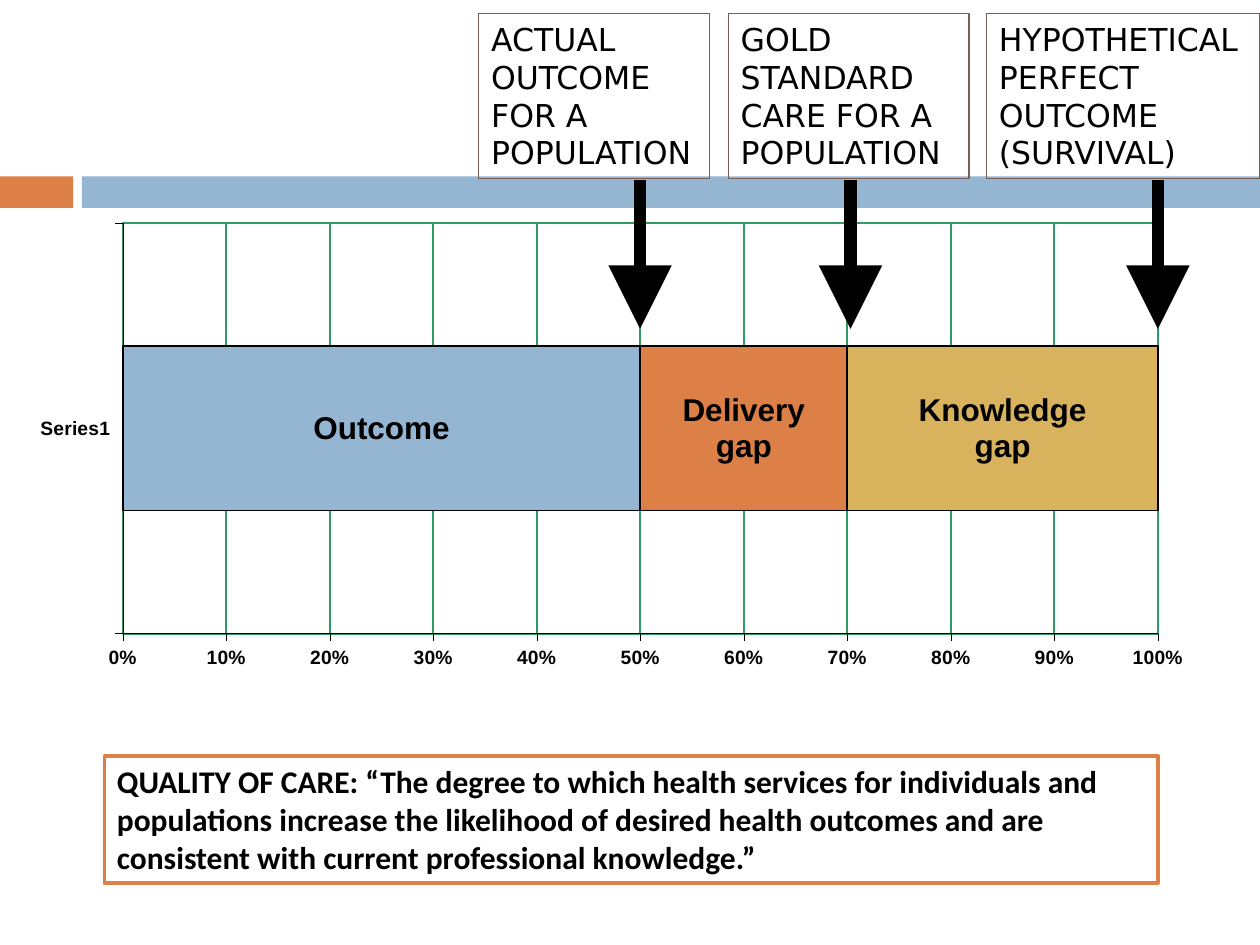
from dataclasses import dataclass

from lxml import etree
from pptx import Presentation
from pptx import util as u
from pptx.chart import data
from pptx.dml import color
from pptx.enum import chart as charts, shapes, text
from pptx.oxml import ns, parse_xml


@dataclass(frozen=True)
class Theme:
    black: str = "000000"
    blue: str = "94B6D2"
    orange: str = "DD8047"
    gold: str = "D8B25C"
    brown: str = "775F55"
    green: str = "339966"
    axis_size: float = 11
    text_size: float = 18
    hairline: float = 0.25
    outline: float = 0.75
    chart_line: float = 0.96
    frame_line: float = 2.25
    arrow_line: float = 7.25


@dataclass(frozen=True)
class Box:
    left: float
    top: float
    width: float
    height: float

    @property
    def bottom(self):
        return self.top + self.height

    def emu(self):
        return [cells(n) for n in (self.left, self.top, self.width, self.height)]


THEME = Theme()
COLUMNS, ROWS = 100, 75
CELL = u.Inches(0.1)


def cells(count):
    return u.Emu(round(count * CELL))


def rgb(value):
    return color.RGBColor.from_string(value)


def style_line(line, value, width):
    line.color.rgb = rgb(value)
    line.width = u.Pt(width)


def style_font(font, name, size, bold=False):
    font.name, font.size, font.bold = name, u.Pt(size), bold
    font.color.rgb = rgb(THEME.black)


def add_band(page, box):
    accent, gap = 5.8, 0.7
    start = box.left + accent + gap
    parts = (
        (Box(box.left, box.top, accent, box.height), THEME.orange),
        (Box(start, box.top, box.width - accent - gap, box.height), THEME.blue),
    )
    for part, fill in parts:
        bar = page.shapes.add_shape(shapes.MSO_SHAPE.RECTANGLE, *part.emu())
        bar.fill.solid()
        bar.fill.fore_color.rgb = rgb(fill)
        bar.line.fill.background()
        bar.shadow.inherit = False


def add_framed_text(page, box, words, font_name, bold, line_color, line_width):
    frame = page.shapes.add_textbox(*box.emu())
    style_line(frame.line, line_color, line_width)
    frame.text_frame.word_wrap = True
    frame.text_frame.auto_size = text.MSO_AUTO_SIZE.SHAPE_TO_FIT_TEXT
    para = frame.text_frame.paragraphs[0]
    para.text = words
    style_font(para.font, font_name, THEME.text_size, bold)


def add_arrow(page, column, start, tip):
    arrow = page.shapes.add_connector(
        shapes.MSO_CONNECTOR.STRAIGHT,
        cells(column), cells(start), cells(column), cells(tip),
    )
    style_line(arrow.line, THEME.black, THEME.arrow_line)
    properties = arrow.element.spPr
    etree.SubElement(
        arrow.line._get_or_add_ln(), ns.qn("a:tailEnd"),
        type="triangle", w="lg", len="lg",
    )
    etree.SubElement(properties, ns.qn("a:effectLst"))


def add_callouts(page, box, arrow_tip):
    callouts = (
        ("ACTUAL OUTCOME FOR A POPULATION", 0, 18.3, 50.8),
        ("GOLD STANDARD CARE FOR A POPULATION", 19.8, 19.1, 67.5),
        ("HYPOTHETICAL PERFECT OUTCOME (SURVIVAL)", 40.3, 21.7, 91.9),
    )
    for words, offset, width, column in callouts:
        place = Box(box.left + offset, box.top, width, box.height)
        add_framed_text(page, place, words, "DejaVu Sans", False,
                        THEME.brown, THEME.outline)
        add_arrow(page, column, box.bottom + 0.1, arrow_tip)


def place_plot(chart, box, inner):
    shares = {
        "x": (inner.left - box.left) / box.width,
        "y": (inner.top - box.top) / box.height,
        "w": inner.width / box.width,
        "h": inner.height / box.height,
    }
    sizes = "".join(f'<c:{key} val="{share:.4f}"/>' for key, share in shares.items())
    layout = parse_xml(
        f'<c:layout {ns.nsdecls("c")}><c:manualLayout>'
        '<c:layoutTarget val="inner"/><c:xMode val="edge"/><c:yMode val="edge"/>'
        f'{sizes}</c:manualLayout></c:layout>'
    )
    border = parse_xml(
        f'<c:spPr {ns.nsdecls("c", "a")}><a:noFill/>'
        f'<a:ln w="{u.Pt(THEME.chart_line)}"><a:solidFill>'
        f'<a:srgbClr val="{THEME.green}"/></a:solidFill></a:ln></c:spPr>'
    )
    area = chart.element.find(".//" + ns.qn("c:plotArea"))
    for old in area.findall(ns.qn("c:layout")):
        area.remove(old)
    area.insert(0, layout)
    area.append(border)


def add_gap_chart(page, box, inner):
    parts = (
        ("Outcome", 50, THEME.blue),
        ("Delivery gap", 20, THEME.orange),
        ("Knowledge gap", 30, THEME.gold),
    )
    values = data.CategoryChartData()
    values.categories = ["Series1"]
    for name, value, _ in parts:
        values.add_series(name, [value])
    chart = page.shapes.add_chart(
        charts.XL_CHART_TYPE.BAR_STACKED_100, *box.emu(), values
    ).chart
    chart.has_title = chart.has_legend = False
    style_font(chart.font, "Arial", THEME.axis_size, True)

    plot = chart.plots[0]
    plot.gap_width, plot.overlap = 150, 100
    plot.vary_by_categories = False
    for series, (_, _, fill) in zip(plot.series, parts):
        series.format.fill.solid()
        series.format.fill.fore_color.rgb = rgb(fill)
        style_line(series.format.line, THEME.black, THEME.chart_line)
        labels = series.data_labels
        labels.show_series_name, labels.show_value = True, False
        labels.position = charts.XL_LABEL_POSITION.CENTER
        style_font(labels.font, "Arial", THEME.text_size, True)

    for axis in (chart.category_axis, chart.value_axis):
        axis.major_tick_mark = charts.XL_TICK_MARK.OUTSIDE
        axis.minor_tick_mark = charts.XL_TICK_MARK.NONE
        style_line(axis.format.line, THEME.black, THEME.hairline)
        style_font(axis.tick_labels.font, "Arial", THEME.axis_size, True)
    scale = chart.value_axis
    scale.minimum_scale, scale.maximum_scale, scale.major_unit = 0, 1, 0.1
    scale.tick_labels.number_format = "0%"
    scale.tick_labels.number_format_is_linked = False
    scale.has_major_gridlines = True
    style_line(scale.major_gridlines.format.line, THEME.green, THEME.chart_line)
    place_plot(chart, box, inner)


def add_definition(page, box):
    words = (
        "QUALITY OF CARE: “The degree to which health services for individuals "
        "and populations increase the likelihood of desired health outcomes and "
        "are consistent with current professional knowledge.”"
    )
    add_framed_text(page, box, words, "Calibri", True,
                    THEME.orange, THEME.frame_line)


def main():
    deck = Presentation()
    deck.slide_width, deck.slide_height = cells(COLUMNS), cells(ROWS)
    page = deck.slides.add_slide(deck.slide_layouts[6])
    add_band(page, Box(0, 14, COLUMNS, 2.5))
    add_gap_chart(page, Box(3.2, 15.8, 94.5, 41.6), Box(9.7, 17.7, 82.2, 32.6))
    add_callouts(page, Box(38, 1.1, 62, 13.1), 26.1)
    add_definition(page, Box(8.3, 60, 83.6, 10.1))
    deck.save("out.pptx")


if __name__ == "__main__":
    main()
